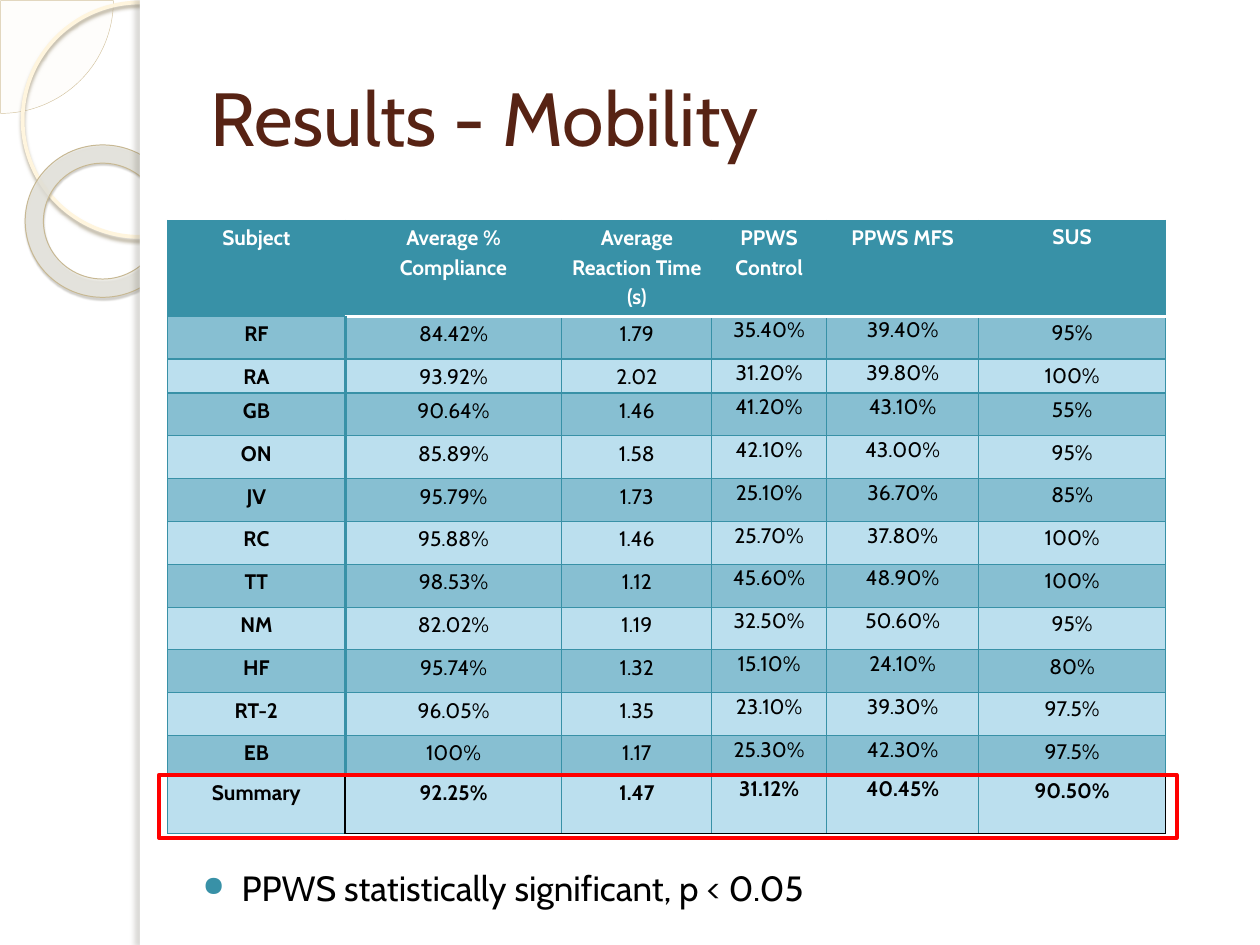
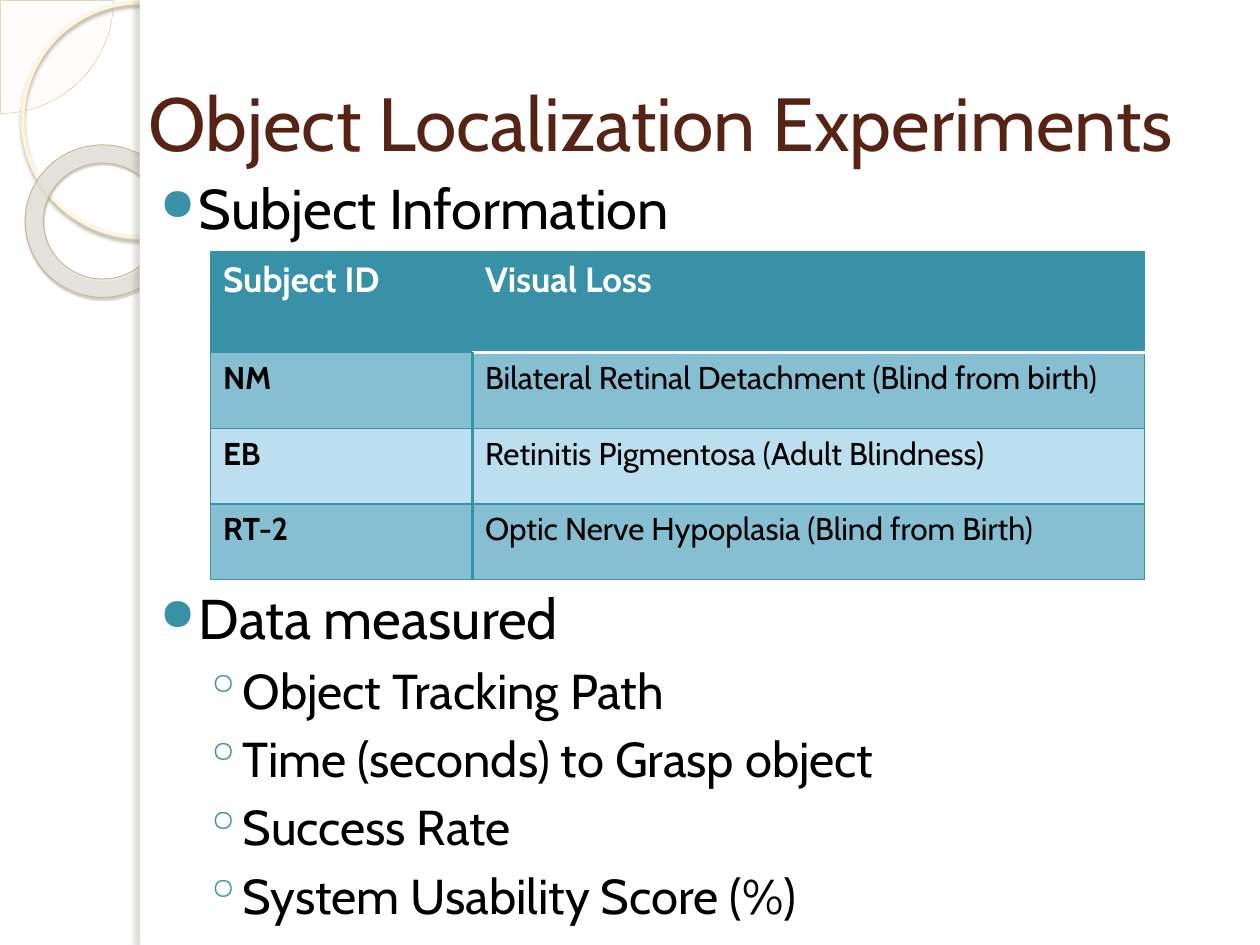
from lxml import etree
from pptx import Presentation
from pptx.dml.color import RGBColor
from pptx.enum.shapes import MSO_SHAPE
from pptx.enum.text import MSO_ANCHOR, PP_ALIGN
from pptx.oxml.ns import qn
from pptx.util import Inches, Pt

RECTANGLE, OVAL = MSO_SHAPE.RECTANGLE, MSO_SHAPE.OVAL
DONUT, PIE = MSO_SHAPE.DONUT, MSO_SHAPE.PIE
TOP, MIDDLE = MSO_ANCHOR.TOP, MSO_ANCHOR.MIDDLE
LEFT, CENTER = PP_ALIGN.LEFT, PP_ALIGN.CENTER

FONT = "Cabin"
COLORS = {
    "white": "FFFFFF", "black": "000000", "title": "572314", "teal": "3891A7",
    "dark_band": "87BFD2", "light_band": "BBDFEE", "highlight": "FF0000",
    "pie": "FEFAF4", "pie_line": "D3C39F", "ring": "FFF5DE", "ring_shadow": "B0A68F",
    "donut": "E9E8E1", "donut_line": "C7B893", "donut_shadow": "5A5444",
    "strip_shadow": "736F63",
}
# level: (left margin, first-line indent, space before, bullet, bullet size)
BULLETS = [(0.4, -0.31, 6, "●", 80), (0.7, -0.26, 5.5, "◦", 100)]
THIN = ("teal", 0.75)
THICK = ("teal", 2)
HEADER_RULE = ("white", 2)
BLACK_RULE = ("black", 1)

RESULTS = [
    ("Subject", "Average % Compliance", "Average Reaction Time (s)",
     "PPWS Control", "PPWS MFS", "SUS"),
    ("RF", "84.42%", "1.79", "35.40%", "39.40%", "95%"),
    ("RA", "93.92%", "2.02", "31.20%", "39.80%", "100%"),
    ("GB", "90.64%", "1.46", "41.20%", "43.10%", "55%"),
    ("ON", "85.89%", "1.58", "42.10%", "43.00%", "95%"),
    ("JV", "95.79%", "1.73", "25.10%", "36.70%", "85%"),
    ("RC", "95.88%", "1.46", "25.70%", "37.80%", "100%"),
    ("TT", "98.53%", "1.12", "45.60%", "48.90%", "100%"),
    ("NM", "82.02%", "1.19", "32.50%", "50.60%", "95%"),
    ("HF", "95.74%", "1.32", "15.10%", "24.10%", "80%"),
    ("RT-2", "96.05%", "1.35", "23.10%", "39.30%", "97.5%"),
    ("EB", "100%", "1.17", "25.30%", "42.30%", "97.5%"),
    ("Summary", "92.25%", "1.47", "31.12%", "40.45%", "90.50%"),
]
SUBJECTS = [
    ("Subject ID", "Visual Loss"),
    ("NM", "Bilateral Retinal Detachment (Blind from birth)"),
    ("EB", "Retinitis Pigmentosa (Adult Blindness)"),
    ("RT-2", "Optic Nerve Hypoplasia (Blind from Birth)"),
]


def color(name):
    """Return the named colour."""
    return RGBColor.from_string(COLORS[name])


def add_child(parent, tag, **attributes):
    """Append a DrawingML element to a parent element."""
    child = etree.SubElement(parent, qn(f"a:{tag}"))
    for key, value in attributes.items():
        child.set(key, str(value))
    return child


def add_color(parent, name):
    """Append a colour element to a parent element."""
    return add_child(parent, "srgbClr", val=COLORS[name])


def style_font(paragraph, size, color_name, bold=False):
    """Set the font of a paragraph."""
    font = paragraph.font
    font.name, font.size, font.bold = FONT, Pt(size), bold
    font.color.rgb = color(color_name)


def add_shape(slide, kind, box, fill=None, alpha=100, line=None, shadow=None):
    """Add a preset shape with optional fill, line and shadow."""
    shape = slide.shapes.add_shape(kind, *map(Inches, box))
    shape.shadow.inherit = False
    properties = shape._element.spPr
    if fill:
        shape.fill.solid()
        shape.fill.fore_color.rgb = color(fill)
        if alpha < 100:
            fill_color = properties.find(qn("a:solidFill"))[0]
            add_child(fill_color, "alpha", val=alpha * 1000)
    else:
        shape.fill.background()
    if line:
        shape.line.color.rgb = color(line[0])
        shape.line.width = Pt(line[1])
    else:
        shape.line.fill.background()
    if shadow:
        name, opacity, blur, distance, angle = shadow
        effect = add_child(properties.find(qn("a:effectLst")), "outerShdw",
                           blurRad=Pt(blur), dist=Pt(distance),
                           dir=angle * 60000, rotWithShape=0)
        add_child(add_color(effect, name), "alpha", val=opacity * 1000)
    return shape


def add_decoration(slide):
    """Draw the circles and the white panel shared by the slides."""
    pie = add_shape(slide, PIE, (-0.89, -0.89, 1.79, 1.79), "pie", 33, ("pie_line", 0.25))
    pie.adjustments[0], pie.adjustments[1] = 0, 54
    add_shape(slide, OVAL, (0.18, 0.02, 1.86, 1.86), line=("ring", 2.15),
              shadow=("ring_shadow", 85, 2, 2, 90))
    donut = add_shape(slide, DONUT, (0.2, 1.15, 1.23, 1.21), "donut", 75,
                      ("donut_line", 0.58), ("donut_shadow", 35, 1, 1.2, 75))
    donut.adjustments[0] = 0.12
    add_shape(slide, RECTANGLE, (1.11, 0, 8.89, 7.5), "white")
    add_shape(slide, RECTANGLE, (1.11, 0, 0.08, 7.5), "white",
              shadow=("strip_shadow", 25, 3, 3, 180))


def add_text_frame(slide, box, anchor=TOP):
    """Add a wrapping text box and return its text frame."""
    frame = slide.shapes.add_textbox(*map(Inches, box)).text_frame
    frame.word_wrap = True
    frame.vertical_anchor = anchor
    return frame


def add_title(slide, text, box):
    """Add the slide title."""
    paragraph = add_text_frame(slide, box, MIDDLE).paragraphs[0]
    paragraph.text = text
    style_font(paragraph, 43, "title")


def add_bullets(slide, box, items):
    """Add bulleted lines given as (text, level, size)."""
    frame = add_text_frame(slide, box)
    for index, (text, level, size) in enumerate(items):
        paragraph = frame.add_paragraph() if index else frame.paragraphs[0]
        paragraph.text = text
        paragraph.level = level
        margin, indent, space, bullet, bullet_size = BULLETS[level]
        properties = paragraph._p.get_or_add_pPr()
        properties.set("marL", str(Inches(margin)))
        properties.set("indent", str(Inches(indent)))
        add_color(add_child(properties, "buClr"), "teal")
        add_child(properties, "buSzPct", val=bullet_size * 1000)
        add_child(properties, "buChar", char=bullet)
        paragraph.space_before = Pt(space)
        style_font(paragraph, size, "black")


def cell_borders(row, column, summary_row):
    """Return the left, right, top and bottom border of a cell."""
    left = right = top = bottom = THIN
    if row > 0 and column == 0:
        right = THICK
    if row > 0 and column == 1:
        left = THICK
    if column > 0:
        if row == 0:
            bottom = HEADER_RULE
        if row == 1:
            top = HEADER_RULE
    if summary_row:
        if column > 0 and row == summary_row - 1:
            bottom = BLACK_RULE
        if row == summary_row:
            if column == 0:
                right = BLACK_RULE
            else:
                top = bottom = BLACK_RULE
            if column == 1:
                left = BLACK_RULE
            if column == 5:
                right = BLACK_RULE
    return left, right, top, bottom


def style_cell(cell, row, column, summary_row):
    """Set the borders and the band fill of a cell."""
    properties = cell._tc.get_or_add_tcPr()
    borders = cell_borders(row, column, summary_row)
    for side, (name, width) in zip("LRTB", borders):
        line = add_child(properties, f"ln{side}", w=Pt(width))
        add_color(add_child(line, "solidFill"), name)
    band = "dark_band" if row % 2 else "light_band"
    cell.fill.solid()
    cell.fill.fore_color.rgb = color(band if row else "teal")


def add_table(slide, position, widths, heights, rows, sizes, summary_row=None):
    """Add a banded table; sizes holds the header and body font size."""
    box = (*position, sum(widths), sum(heights))
    table = slide.shapes.add_table(len(rows), len(widths), *map(Inches, box)).table
    for column, width in zip(table.columns, widths):
        column.width = Inches(width)
    for row, height in zip(table.rows, heights):
        row.height = Inches(height)
    for row, texts in enumerate(rows):
        for column, text in enumerate(texts):
            cell = table.cell(row, column)
            style_cell(cell, row, column, summary_row)
            paragraph = cell.text_frame.paragraphs[0]
            paragraph.text = text
            bold = row == 0 or column == 0 or row == summary_row
            style_font(paragraph, sizes[row > 0], "black" if row else "white", bold)
    return table


def center_results(table):
    """Centre the result cells and tighten their margins and spacing."""
    for row_index, row in enumerate(table.rows):
        for column, cell in enumerate(row.cells):
            cell.margin_left = cell.margin_right = Inches(0.05 if column < 3 else 0)
            cell.margin_top = Inches(0.01 if column < 5 else 0)
            cell.margin_bottom = 0
            paragraph = cell.text_frame.paragraphs[0]
            paragraph.alignment = CENTER
            if row_index == 0 or column not in (3, 4):
                paragraph.line_spacing = 1.15
                paragraph.space_after = Pt(10)


def add_slide(presentation):
    """Add a blank slide with the shared decoration."""
    slide = presentation.slides.add_slide(presentation.slide_layouts[6])
    add_decoration(slide)
    return slide


def build_mobility(presentation):
    """Build the mobility results slide."""
    slide = add_slide(presentation)
    add_title(slide, "Results - Mobility", (1.57, 0.3, 8.2, 1.25))
    heights = [0.76, 0.34, 0.27] + [0.34] * 8 + [0.31, 0.47]
    table = add_table(slide, (1.33, 1.75), [1.41, 1.72, 1.19, 0.91, 1.21, 1.48],
                      heights, RESULTS, (12, 12), summary_row=12)
    center_results(table)
    add_bullets(slide, (1.42, 6.83, 8.2, 0.67),
                [("PPWS statistically significant, p < 0.05", 0, 20)])
    add_shape(slide, RECTANGLE, (1.26, 6.15, 8.08, 0.5), line=("highlight", 2))


def build_localization(presentation):
    """Build the object localization slide."""
    slide = add_slide(presentation)
    add_title(slide, "Object Localization Experiments", (1.08, 0.42, 8.92, 1.08))
    measures = ["Object Tracking Path", "Time (seconds) to Grasp object",
                "Success Rate", "System Usability Score (%)"]
    add_bullets(slide, (1.08, 4.58, 8.92, 3.17),
                [("Data measured", 0, 32)] + [(text, 1, 28) for text in measures])
    add_bullets(slide, (1.08, 1.33, 8.5, 0.67), [("Subject Information", 0, 32)])
    table = add_table(slide, (1.67, 2), [2.08, 5.33], [0.8] + [0.6] * 3,
                      SUBJECTS, (20, 18))
    for cell in table.iter_cells():
        cell.text_frame.paragraphs[0].alignment = LEFT


def main():
    """Build and save the presentation."""
    presentation = Presentation()
    presentation.slide_width = Inches(10)
    presentation.slide_height = Inches(7.5)
    build_mobility(presentation)
    build_localization(presentation)
    presentation.save("out.pptx")


if __name__ == "__main__":
    main()
